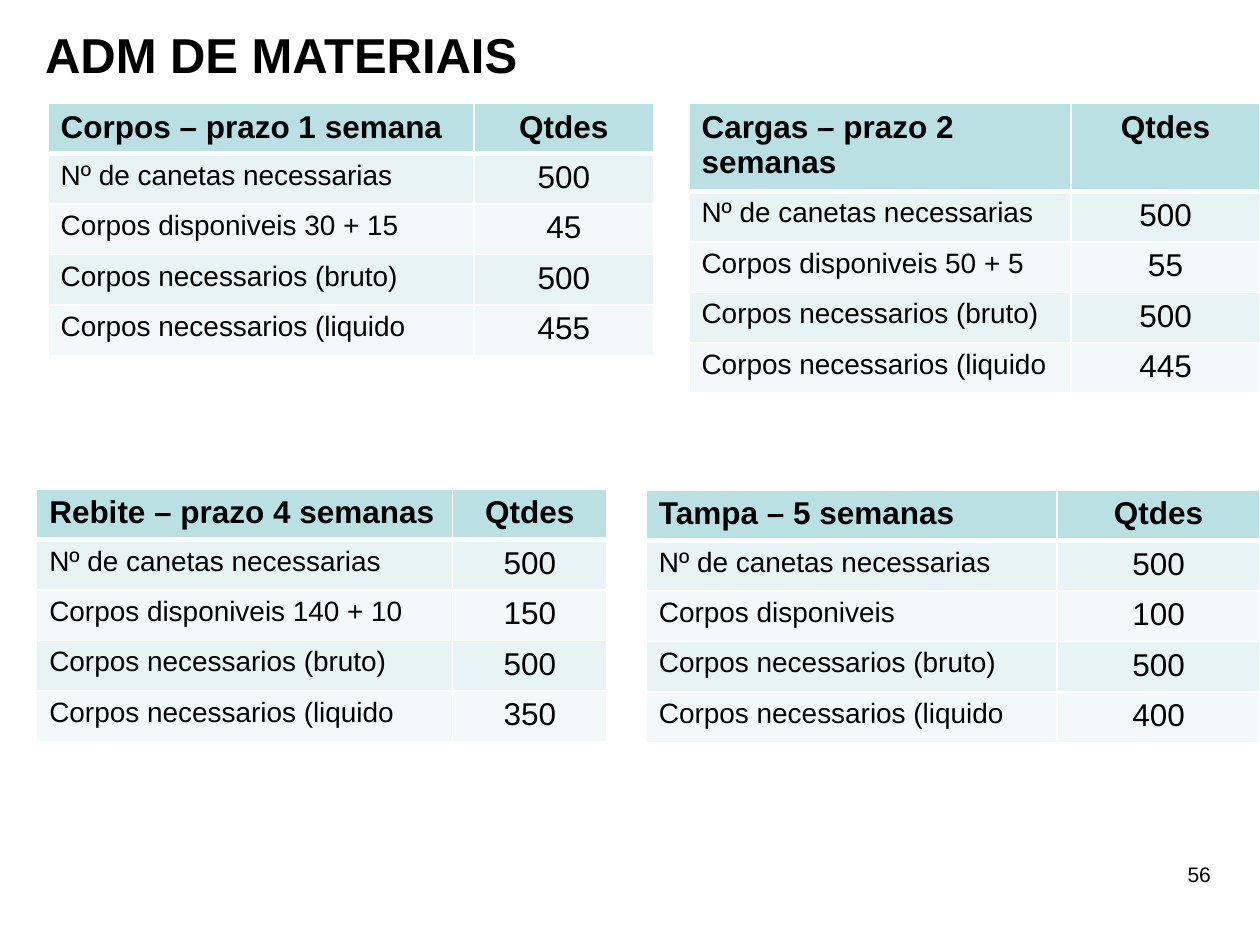
from lxml.etree import SubElement
from pptx import Presentation
from pptx.dml.color import RGBColor
from pptx.enum.text import MSO_ANCHOR, PP_ALIGN
from pptx.oxml.ns import qn
from pptx.util import Cm, Pt

COLORS = {
    "text": "000000",
    "border": "FFFFFF",
    "header": "BBE0E3",
    "odd": "E7F3F4",
    "even": "F3F9FA",
}


def write(tf, text, size=18, bold=False, align=PP_ALIGN.LEFT):
    p = tf.paragraphs[0]
    p.alignment = align
    r = p.add_run()
    r.text = text
    r.font.name = "Arial"
    r.font.size = Pt(size)
    r.font.bold = bold
    r.font.color.rgb = RGBColor.from_string(COLORS["text"])


def set_border(cell, side, width):
    ln = SubElement(cell._tc.get_or_add_tcPr(), qn(f"a:ln{side}"), w=str(Pt(width)))
    fill = SubElement(ln, qn("a:solidFill"))
    SubElement(fill, qn("a:srgbClr"), val=COLORS["border"])


prs = Presentation()
prs.slide_width, prs.slide_height = Cm(25.4), Cm(19.05)
s = prs.slides.add_slide(prs.slide_layouts[6])

title = s.shapes.add_textbox(Cm(0.66), Cm(0.36), Cm(10.13), Cm(1.45))
title.text_frame.word_wrap = False
write(title.text_frame, "ADM DE MATERIAIS", size=28, bold=True)

number = s.shapes.add_textbox(Cm(23.44), Cm(16.99), Cm(1.22), Cm(1.02))
number.text_frame.word_wrap = True
number.text_frame.vertical_anchor = MSO_ANCHOR.BOTTOM
write(number.text_frame, "56", size=12, align=PP_ALIGN.RIGHT)

ROW_HEIGHT = 1.01
TABLES = [
    ("Corpos – prazo 1 semana", " 30 + 15", (500, 45, 500, 455),
     (0.97, 2.08), (8.59, 3.61), ROW_HEIGHT),
    ("Cargas – prazo 2 semanas", " 50 + 5", (500, 55, 500, 445),
     (13.89, 2.08), (7.7, 3.81), 1.75),
    ("Rebite – prazo 4 semanas", " 140 + 10", (500, 150, 500, 350),
     (0.74, 9.86), (8.38, 3.12), ROW_HEIGHT),
    ("Tampa – 5 semanas", "", (500, 100, 500, 400),
     (13.03, 9.88), (8.28, 4.09), ROW_HEIGHT),
]

for heading, stock, values, (left, top), widths, header_height in TABLES:
    labels = [
        "Nº de canetas necessarias",
        f"Corpos disponiveis{stock}",
        "Corpos necessarios (bruto)",
        "Corpos necessarios (liquido",
    ]
    rows = [(heading, "Qtdes"), *zip(labels, values)]
    heights = [header_height] + [ROW_HEIGHT] * len(labels)
    table = s.shapes.add_table(len(rows), 2, Cm(left), Cm(top),
                               Cm(sum(widths)), Cm(sum(heights))).table
    for column, width in zip(table.columns, widths):
        column.width = Cm(width)
    for i, row in enumerate(rows):
        table.rows[i].height = Cm(heights[i])
        band = "header" if i == 0 else "odd" if i % 2 else "even"
        for j, text in enumerate(row):
            cell = table.cell(i, j)
            for side in "LRTB":
                thick = (i, side) in [(0, "B"), (1, "T")]
                set_border(cell, side, 3 if thick else 1)
            cell.fill.solid()
            cell.fill.fore_color.rgb = RGBColor.from_string(COLORS[band])
            write(cell.text_frame, str(text),
                  size=16 if i and j == 0 else 18,
                  bold=i == 0,
                  align=PP_ALIGN.CENTER if j else PP_ALIGN.LEFT)

prs.save("out.pptx")
